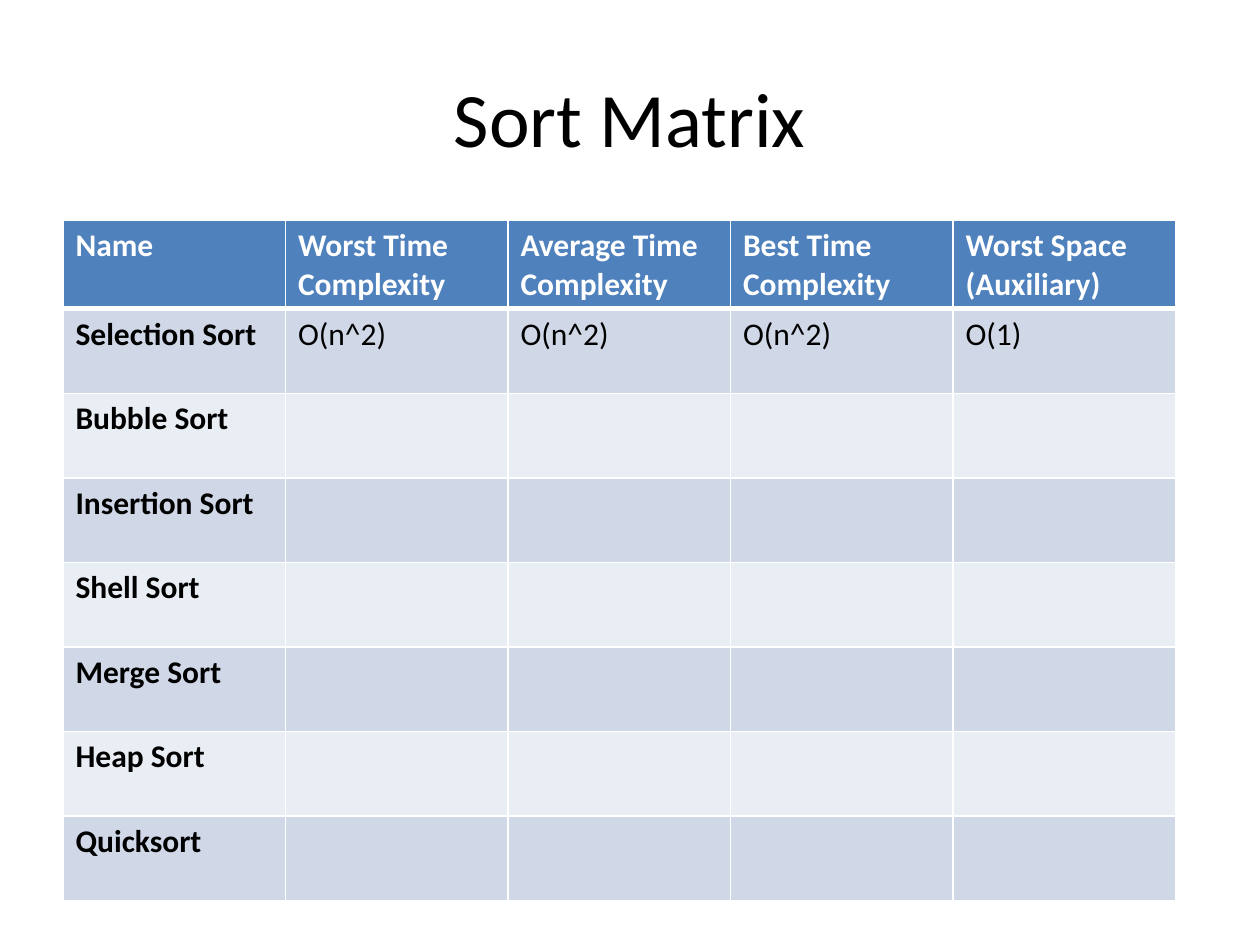
from lxml import etree
from pptx import Presentation
from pptx.dml.color import RGBColor
from pptx.enum.text import MSO_ANCHOR, PP_ALIGN
from pptx.oxml.ns import qn
from pptx.util import Inches, Pt

CENTER, MIDDLE = PP_ALIGN.CENTER, MSO_ANCHOR.MIDDLE
FONT = "Calibri"
WHITE, BLACK, HEADER = "FFFFFF", "000000", "4F81BD"
BANDS = ["E9EDF4", "D0D8E8"]

ROWS = [
    ["Name", "Worst Time Complexity", "Average Time Complexity",
     "Best Time Complexity", "Worst Space (Auxiliary)"],
    ["Selection Sort", "O(n^2)", "O(n^2)", "O(n^2)", "O(1)"],
    ["Bubble Sort"],
    ["Insertion Sort"],
    ["Shell Sort"],
    ["Merge Sort"],
    ["Heap Sort"],
    ["Quicksort"],
]


def style_text(para, size, color, bold=False):
    for span in para.runs:
        span.font.name = FONT
        span.font.size = Pt(size)
        span.font.bold = bold
        span.font.color.rgb = RGBColor.from_string(color)


def add_borders(cell, widths):
    """Draw white cell borders; widths are points for left, right, top, bottom."""
    properties = cell._tc.get_or_add_tcPr()
    for position, (side, width) in enumerate(zip("LRTB", widths)):
        line = etree.Element(qn(f"a:ln{side}"), w=str(Pt(width)))
        fill = etree.SubElement(line, qn("a:solidFill"))
        etree.SubElement(fill, qn("a:srgbClr"), val=WHITE)
        properties.insert(position, line)


deck = Presentation()
deck.slide_width, deck.slide_height = Inches(10), Inches(7.5)
page = deck.slides.add_slide(deck.slide_layouts[6])
margin = Inches(0.5)

title = page.shapes.add_textbox(margin, Inches(0.3), deck.slide_width - 2 * margin, Inches(1.25))
title.text_frame.word_wrap = True
title.text_frame.vertical_anchor = MIDDLE
title.text_frame.text = "Sort Matrix"
heading = title.text_frame.paragraphs[0]
heading.alignment = CENTER
style_text(heading, 44, BLACK)

matrix = page.shapes.add_table(len(ROWS), len(ROWS[0]), margin, Inches(1.75),
                               Inches(8.83), Inches(5.37)).table
matrix.first_col = True

for row, texts in enumerate(ROWS):
    is_header = row == 0
    for column in range(len(ROWS[0])):
        cell = matrix.cell(row, column)
        cell.fill.solid()
        cell.fill.fore_color.rgb = RGBColor.from_string(HEADER if is_header else BANDS[row % 2])
        add_borders(cell, [1, 1, 3 if row == 1 else 1, 3 if is_header else 1])
        if column < len(texts):
            cell.text_frame.text = texts[column]
            style_text(cell.text_frame.paragraphs[0], 18, WHITE if is_header else BLACK,
                       bold=is_header or column == 0)

deck.save("out.pptx")
